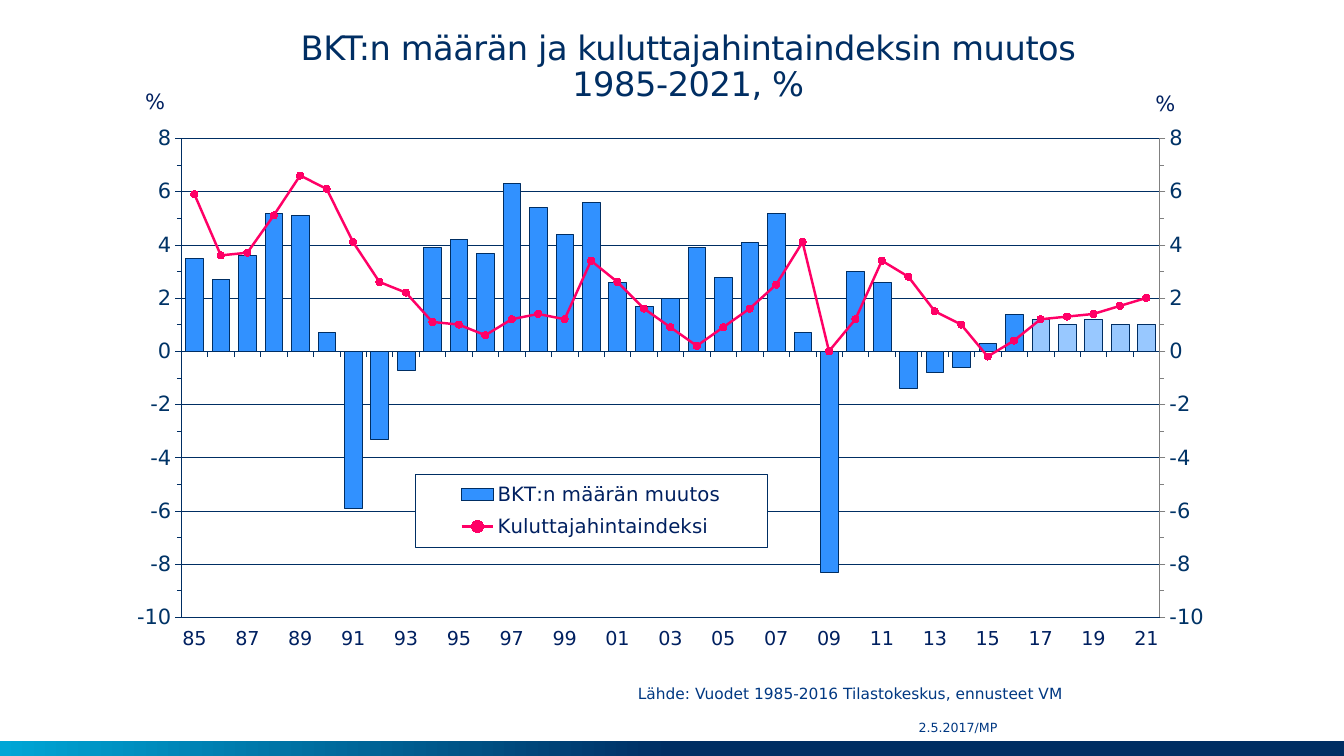
from dataclasses import dataclass

from lxml.etree import SubElement
from pptx import Presentation
from pptx.chart.data import CategoryChartData
from pptx.dml.color import RGBColor
from pptx.enum.chart import XL_CHART_TYPE as ChartType
from pptx.enum.chart import XL_LEGEND_POSITION as LegendPosition
from pptx.enum.chart import XL_MARKER_STYLE as Marker
from pptx.enum.chart import XL_TICK_LABEL_POSITION as LabelPosition
from pptx.enum.chart import XL_TICK_MARK as TickMark
from pptx.enum.shapes import MSO_SHAPE as Shape
from pptx.enum.text import MSO_ANCHOR as Anchor
from pptx.enum.text import PP_ALIGN as Align
from pptx.oxml import parse_xml
from pptx.oxml.ns import nsdecls, qn
from pptx.util import Inches, Pt


@dataclass(frozen=True)
class Theme:
    """Colours, font and type sizes of the slide."""
    font: str = "DejaVu Sans"
    navy: str = "002E63"
    cyan: str = "00A6D6"
    source: str = "003882"
    label: str = "002060"
    axis: str = "003366"
    gdp: str = "3191FF"
    forecast: str = "98C8FF"
    prices: str = "FF0066"
    white: str = "FFFFFF"
    title_size: float = 24
    axis_size: float = 15
    legend_size: float = 14.1
    year_size: float = 13.7
    source_size: float = 11
    date_size: float = 9


THEME = Theme()
YEARS = range(1985, 2022)
FIRST_FORECAST = 2017
GDP = [3.5, 2.7, 3.6, 5.2, 5.1, 0.7, -5.9, -3.3, -0.7, 3.9, 4.2, 3.7, 6.3,
       5.4, 4.4, 5.6, 2.6, 1.7, 2, 3.9, 2.8, 4.1, 5.2, 0.7, -8.3, 3, 2.6,
       -1.4, -0.8, -0.6, 0.3, 1.4, 1.2, 1, 1.2, 1, 1]
PRICES = [5.9, 3.6, 3.7, 5.1, 6.6, 6.1, 4.1, 2.6, 2.2, 1.1, 1, 0.6, 1.2,
          1.4, 1.2, 3.4, 2.6, 1.6, 0.9, 0.2, 0.9, 1.6, 2.5, 4.1, 0, 1.2, 3.4,
          2.8, 1.5, 1, -0.2, 0.4, 1.2, 1.3, 1.4, 1.7, 2]
PLOT_BOX = (0.053, 0.031, 0.907, 0.907)
LEGEND_BOX = (0.27, 0.666, 0.326, 0.139)


def rgb(color):
    """Turn a hex string into a colour."""
    return RGBColor.from_string(color)


def style_font(font, size, color):
    """Apply the theme font with a size and colour."""
    font.name, font.size, font.bold = THEME.font, Pt(size), False
    font.color.rgb = rgb(color)


def style_line(line, color, width):
    """Give a line its colour and width."""
    line.color.rgb = rgb(color)
    line.width = Pt(width)


def add_text(slide, text, box, *, size, color, align=Align.LEFT,
             anchor=Anchor.TOP, spacing=None, tracking=None, wrap=True):
    """Place a text box without insets; a vertical tab breaks the line."""
    frame = slide.shapes.add_textbox(*map(Inches, box)).text_frame
    frame.word_wrap, frame.vertical_anchor = wrap, anchor
    frame.margin_left = frame.margin_right = 0
    frame.margin_top = frame.margin_bottom = 0
    paragraph = frame.paragraphs[0]
    paragraph.text = text
    paragraph.alignment = align
    if spacing:
        paragraph.line_spacing = spacing
    for run in paragraph.runs:
        style_font(run.font, size, color)
        if tracking:
            run.font._element.set("spc", str(round(tracking * 100)))


def place_layout(layout, box, inner=False):
    """Write a manual layout in fractions of the chart."""
    for child in list(layout):
        layout.remove(child)
    manual = SubElement(layout, qn("c:manualLayout"))
    settings = [("layoutTarget", "inner")] if inner else []
    settings += [("xMode", "edge"), ("yMode", "edge"), *zip("xywh", box)]
    for name, value in settings:
        SubElement(manual, qn(f"c:{name}")).set("val", str(value))


def layout_of(parent, before):
    """Return the layout element of a chart part, adding it if missing."""
    layout = parent.find(qn("c:layout"))
    if layout is None:
        layout = parse_xml(f'<c:layout {nsdecls("c")}/>')
        before.addprevious(layout)
    return layout


def move_to_right_axis(chart):
    """Move the second series to a line plot with its own right axis."""
    area = chart._chartSpace.chart.plotArea
    bars = area.find(qn("c:barChart"))
    prices = bars.findall(qn("c:ser"))[1]
    bars.remove(prices)
    invert = prices.find(qn("c:invertIfNegative"))
    if invert is not None:
        prices.remove(invert)
    lines = parse_xml(
        f'<c:lineChart {nsdecls("c")}><c:grouping val="standard"/>'
        '<c:varyColors val="0"/><c:marker val="1"/>'
        '<c:axId val="501"/><c:axId val="502"/></c:lineChart>')
    lines.insert(2, prices)
    bars.addnext(lines)
    last = area.find(qn("c:valAx"))
    for tag, own, other, hidden, side, extra in (
            ("valAx", 502, 501, 0, "r", '<c:crosses val="max"/>'
             '<c:crossBetween val="between"/><c:majorUnit val="2"/>'
             '<c:minorUnit val="1"/>'),
            ("catAx", 501, 502, 1, "b", '<c:crosses val="autoZero"/>')):
        limits = '<c:max val="8"/><c:min val="-10"/>' if tag == "valAx" else ""
        axis = parse_xml(
            f'<c:{tag} {nsdecls("c", "a")}><c:axId val="{own}"/><c:scaling>'
            f'<c:orientation val="minMax"/>{limits}</c:scaling>'
            f'<c:delete val="{hidden}"/><c:axPos val="{side}"/>'
            '<c:numFmt formatCode="0" sourceLinked="0"/>'
            '<c:majorTickMark val="out"/><c:minorTickMark val="out"/>'
            '<c:tickLblPos val="nextTo"/><c:spPr><a:ln w="3175"><a:solidFill>'
            '<a:srgbClr val="808080"/></a:solidFill></a:ln></c:spPr>'
            f'<c:txPr><a:bodyPr/><a:p><a:pPr><a:defRPr sz="{THEME.axis_size * 100}" '
            f'b="0"><a:solidFill><a:srgbClr val="{THEME.axis}"/></a:solidFill>'
            f'<a:latin typeface="{THEME.font}"/></a:defRPr></a:pPr></a:p></c:txPr>'
            f'<c:crossAx val="{other}"/>{extra}</c:{tag}>')
        last.addnext(axis)
        last = axis
    last.addnext(parse_xml(
        f'<c:spPr {nsdecls("c", "a")}><a:noFill/><a:ln w="12700"><a:solidFill>'
        f'<a:srgbClr val="{THEME.navy}"/></a:solidFill></a:ln></c:spPr>'))


def style_axes(chart):
    """Style the year axis and the left value axis."""
    years, percent = chart.category_axis, chart.value_axis
    years.tick_label_position = LabelPosition.LOW
    years.major_tick_mark = percent.major_tick_mark = TickMark.OUTSIDE
    percent.minor_tick_mark = TickMark.OUTSIDE
    percent.minimum_scale, percent.maximum_scale = -10, 8
    percent.major_unit, percent.minor_unit = 2, 1
    percent.tick_labels.number_format = "0"
    percent.tick_labels.number_format_is_linked = False
    style_font(years.tick_labels.font, THEME.year_size, THEME.label)
    style_font(percent.tick_labels.font, THEME.axis_size, THEME.axis)
    for line in (years.format.line, percent.format.line,
                 percent.major_gridlines.format.line):
        style_line(line, THEME.navy, 0.3)


def style_series(chart):
    """Colour the bars, the forecast bars and the price line."""
    bars, lines = chart.plots
    bars.gap_width, bars.vary_by_categories = 50, False
    gdp, prices = bars.series[0], lines.series[0]
    gdp.invert_if_negative = False
    forecasts = [gdp.points[i].format for i, year in enumerate(YEARS)
                 if year >= FIRST_FORECAST]
    for bar, color in [(gdp.format, THEME.gdp),
                       *((point, THEME.forecast) for point in forecasts)]:
        bar.fill.solid()
        bar.fill.fore_color.rgb = rgb(color)
        style_line(bar.line, THEME.navy, 0.25)
    prices.smooth = False
    style_line(prices.format.line, THEME.prices, 1.75)
    marker = prices.marker
    marker.style, marker.size = Marker.CIRCLE, 5
    marker.format.fill.solid()
    marker.format.fill.fore_color.rgb = rgb(THEME.prices)
    style_line(marker.format.line, THEME.prices, 0.75)


def style_legend(chart):
    """Place the framed legend over the plot."""
    chart.has_legend = True
    legend = chart.legend
    legend.position, legend.include_in_layout = LegendPosition.RIGHT, False
    style_font(legend.font, THEME.legend_size, THEME.label)
    element = legend._element
    place_layout(layout_of(element, element.find(qn("c:overlay"))), LEGEND_BOX)
    element.find(qn("c:txPr")).addprevious(parse_xml(
        f'<c:spPr {nsdecls("c", "a")}><a:solidFill><a:srgbClr val="{THEME.white}"/>'
        '</a:solidFill><a:ln w="3175"><a:solidFill>'
        f'<a:srgbClr val="{THEME.navy}"/></a:solidFill></a:ln></c:spPr>'))


def add_growth_chart(slide, box):
    """Draw GDP bars and the price line, with a percent sign over each axis."""
    data = CategoryChartData(number_format="General")
    data.categories = [f"{year % 100:02}" if year % 2 else "" for year in YEARS]
    data.add_series("BKT:n määrän muutos", GDP)
    data.add_series("Kuluttajahintaindeksi", PRICES)
    chart = slide.shapes.add_chart(
        ChartType.COLUMN_CLUSTERED, *map(Inches, box), data).chart
    chart.has_title = False
    style_font(chart.font, THEME.axis_size, THEME.navy)
    style_axes(chart)
    move_to_right_axis(chart)
    style_series(chart)
    style_legend(chart)
    area = chart._chartSpace.chart.plotArea
    place_layout(layout_of(area, area[0]), PLOT_BOX, inner=True)
    left, top, width, _ = box
    for x, y in ((left + 0.21, top - 0.33), (left + width - 0.48, top - 0.31)):
        add_text(slide, "%", (x, y, 0.18, 0.25), size=THEME.axis_size,
                 color=THEME.label, align=Align.CENTER, wrap=False)


def add_footer(slide, box):
    """Draw the gradient band with the source and date above it."""
    left, top, width, height = box
    band = slide.shapes.add_shape(Shape.RECTANGLE, *map(Inches, box))
    band.shadow.inherit = False
    band.line.fill.background()
    band.fill.gradient()
    band.fill.gradient_angle = 180
    for stop, position, color in zip(band.fill.gradient_stops, (0.5, 1),
                                     (THEME.navy, THEME.cyan)):
        stop.position, stop.color.rgb = position, rgb(color)
    add_text(slide, "Lähde: Vuodet 1985-2016 Tilastokeskus, ennusteet VM",
             (left + 6.23, top - 0.56, 4.41, 0.19), size=THEME.source_size,
             color=THEME.source, align=Align.CENTER, wrap=False)
    add_text(slide, "2.5.2017/MP", (left + 9.11, top - 0.21, 1.95, 0.15),
             size=THEME.date_size, color=THEME.source, anchor=Anchor.MIDDLE)


def main():
    """Build the slide and save it."""
    deck = Presentation()
    deck.slide_width, deck.slide_height = Inches(13.33), Inches(7.5)
    slide = deck.slides.add_slide(deck.slide_layouts[6])
    add_footer(slide, (0, 7.35, 13.33, 0.15))
    add_text(slide, "BKT:n määrän ja kuluttajahintaindeksin muutos\v1985-2021, %",
             (2.18, 0.29, 9.29, 0.74), size=THEME.title_size, color=THEME.navy,
             align=Align.CENTER, anchor=Anchor.BOTTOM, spacing=0.9, tracking=-0.3)
    add_growth_chart(slide, (1.23, 1.21, 10.71, 5.24))
    deck.save("out.pptx")


if __name__ == "__main__":
    main()
